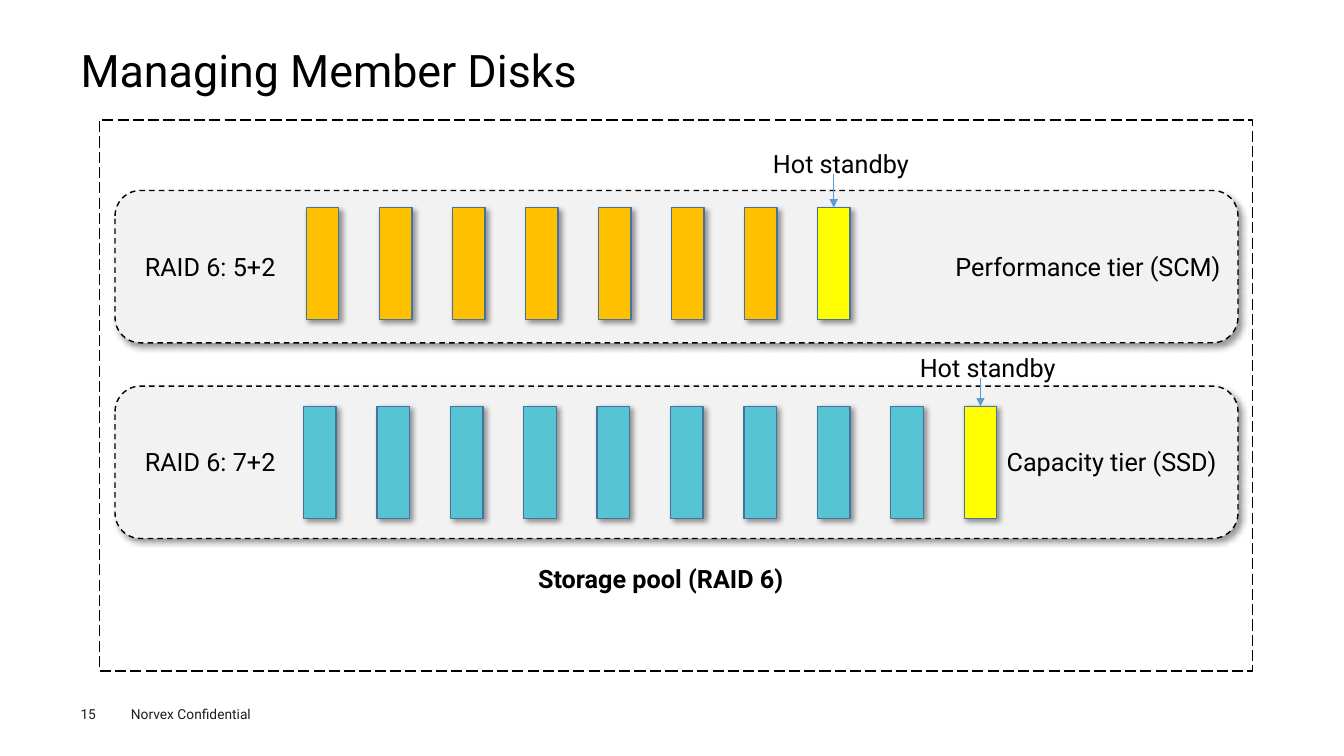
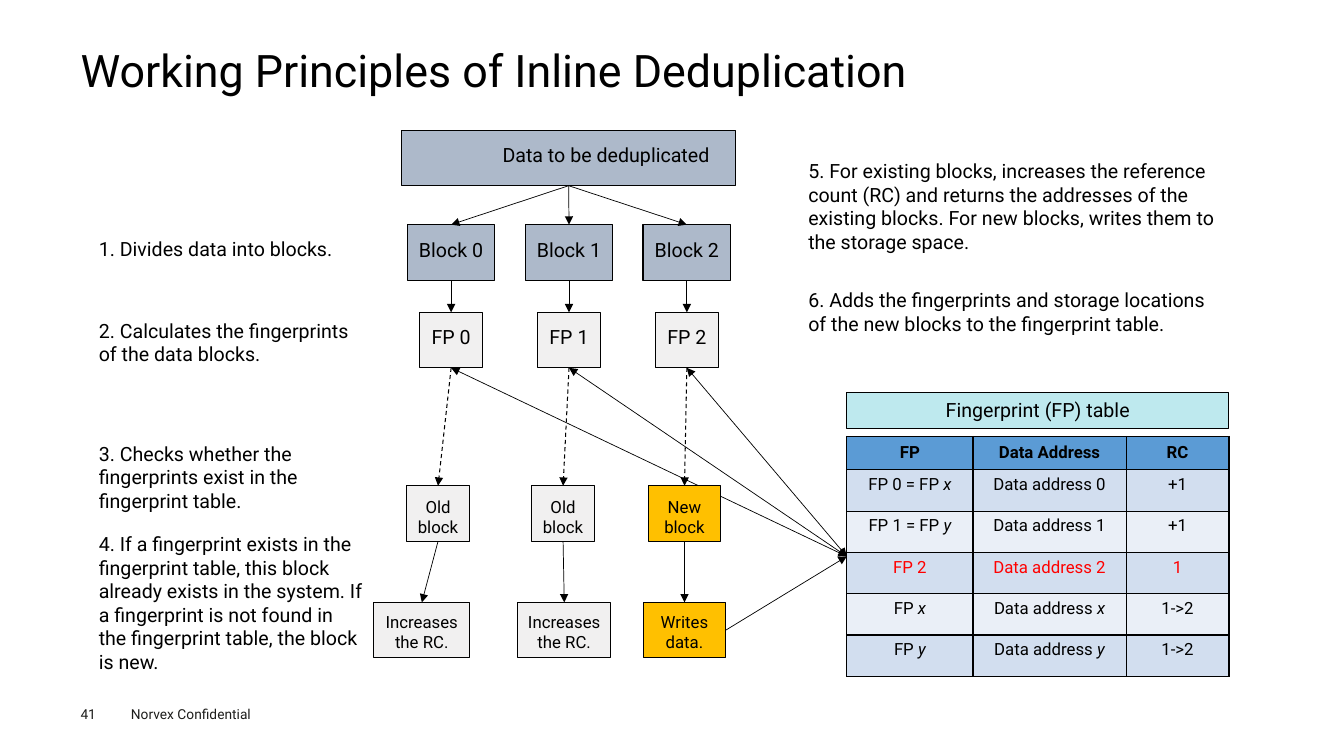
import pptx
import pptx.dml.color
import pptx.enum.dml
import pptx.enum.shapes
import pptx.enum.text
import pptx.oxml
import pptx.oxml.ns
import pptx.util
from lxml import etree

Cm, Pt = pptx.util.Cm, pptx.util.Pt
Dash = pptx.enum.dml.MSO_LINE
Align = pptx.enum.text.PP_ALIGN
Anchor = pptx.enum.text.MSO_ANCHOR
Preset = pptx.enum.shapes.MSO_SHAPE
Link = pptx.enum.shapes.MSO_CONNECTOR
TOP, LEFT, BOTTOM, RIGHT = range(4)

FONT = "Roboto"
FOOTER = "Norvex Confidential"
COLORS = {
    "black": "000000", "white": "FFFFFF", "foot": "1D1D1B", "tier": "F2F2F2",
    "amber": "FFC000", "yellow": "FFFF00", "teal": "56C4D2", "edge": "43739E",
    "blue": "5B9BD5", "slate": "ADB9CA", "grey": "F1F0F0", "aqua": "BEE9EE",
    "dark": "D2DEEF", "light": "EAEFF7", "red": "FF0000",
}

TIERS = [
    {"raid": "RAID 6: 5+2", "name": "Performance tier (SCM)", "top": 4.8,
     "disks": 7, "color": "amber", "left": 7.72, "step": 1.84, "row": 5.23,
     "label": 6.22, "name_x": 23.83, "spare": 3.61, "arrow": 4.39},
    {"raid": "RAID 6: 7+2", "name": "Capacity tier (SSD)", "top": 9.73,
     "disks": 9, "color": "teal", "left": 7.65, "step": 1.85, "row": 10.24,
     "label": 11.13, "name_x": 25.12, "spare": 8.76, "arrow": 9.53},
]
NOTES = [
    (2.24, 5.84, 7.19, 0.86, "1. Divides data into blocks."),
    (2.24, 7.9, 7.19, 1.44, "2. Calculates the fingerprints of the data blocks."),
    (2.24, 11, 7.19, 2.06, "3. Checks whether the fingerprints exist in the fingerprint table."),
    (2.24, 13.28, 7.19, 3.84,
     "4. If a fingerprint exists in the fingerprint table, this block already exists "
     "in the system. If a fingerprint is not found in the fingerprint table, the block is new."),
    (20.12, 3.89, 10.85, 2.64,
     "5. For existing blocks, increases the reference count (RC) and returns the addresses "
     "of the existing blocks. For new blocks, writes them to the storage space."),
    (20.12, 7.14, 10.85, 1.44,
     "6. Adds the fingerprints and storage locations of the new blocks to the fingerprint table."),
]
MID = 11.37
STEP = 2.97
FLOWS = [
    {"fate": "Old\nblock", "act": "Increases the RC.", "color": "grey",
     "fate_x": 11.04, "fate_w": 1.6, "act_x": 10.63, "act_w": 2.41},
    {"fate": "Old\nblock", "act": "Increases the RC.", "color": "grey",
     "fate_x": 14.19, "fate_w": 1.6, "act_x": 14.22, "act_w": 2.34},
    {"fate": "New\nblock", "act": "Writes data.", "color": "amber",
     "fate_x": 17.25, "fate_w": 1.83, "act_x": 17.25, "act_w": 2.08},
]
ROWS = [
    ("FP", "Data Address", "RC"),
    ("FP 0 = FP x", "Data address 0", "+1"),
    ("FP 1 = FP y", "Data address 1", "+1"),
    ("FP 2", "Data address 2", "1"),
    ("FP x", "Data address x", "1->2"),
    ("FP y", "Data address y", "1->2"),
]
COLS = (3.18, 3.86, 2.59)
NEW_ROW = 3


def rgb(name):
    return pptx.dml.color.RGBColor.from_string(COLORS[name])


def style(font, size, color="black", bold=False):
    font.name, font.size, font.bold = FONT, Pt(size), bold
    font.color.rgb = rgb(color)


def sub(node, tag, **attrs):
    return etree.SubElement(node, pptx.oxml.ns.qn(tag), attrs)


def write(frame, text, size, color="black", bold=False, align=Align.LEFT):
    frame.word_wrap = True
    frame.text = text
    for para in frame.paragraphs:
        para.alignment = align
        style(para.font, size, color, bold)


def inset(frame, left=0, top=0, right=0, bottom=0):
    frame.margin_left, frame.margin_top = Cm(left), Cm(top)
    frame.margin_right, frame.margin_bottom = Cm(right), Cm(bottom)


def label(slide, x, y, w, h, text, size, color="black", bold=False):
    box = slide.shapes.add_textbox(Cm(x), Cm(y), Cm(w), Cm(h))
    write(box.text_frame, text, size, color, bold)
    return box.text_frame


def block(slide, x, y, w, h, fill, edge="black", width=0.75, dash=None,
          kind=Preset.RECTANGLE, shade=False):
    shape = slide.shapes.add_shape(kind, Cm(x), Cm(y), Cm(w), Cm(h))
    shape.shadow.inherit = False
    shape.fill.solid()
    shape.fill.fore_color.rgb = rgb(fill)
    shape.line.color.rgb = rgb(edge)
    shape.line.width = Pt(width)
    if dash:
        shape.line.dash_style = dash
    if shade:
        effect = shape._element.spPr.find(pptx.oxml.ns.qn("a:effectLst"))
        outer = sub(effect, "a:outerShdw", blurRad=str(Pt(4)), dist=str(Pt(3)),
                    dir="2700000", algn="tl", rotWithShape="0")
        tone = sub(outer, "a:srgbClr", val=COLORS["black"])
        sub(tone, "a:alpha", val="40000")
    return shape


def node(slide, mid, y, w, fill, text, size=14, top=0, bottom=0):
    shape = block(slide, mid - w / 2, y, w, 1.4, fill)
    frame = shape.text_frame
    write(frame, text, size, align=Align.CENTER)
    inset(frame, 0.1, top, 0.1, bottom)
    frame.vertical_anchor = Anchor.MIDDLE
    return shape


def arrow(slide, start, end, color="black", width=0.5, dash=None, both=False):
    line = slide.shapes.add_connector(Link.STRAIGHT, 0, 0, 0, 0)
    if hasattr(start[0], "shape_id"):
        line.begin_connect(*start)
    else:
        line.begin_x, line.begin_y = start
    line.end_connect(*end)
    line.line.color.rgb = rgb(color)
    line.line.width = Pt(width)
    if dash:
        line.line.dash_style = dash
    ends = ("a:headEnd", "a:tailEnd") if both else ("a:tailEnd",)
    for tag in ends:
        sub(line.line._get_or_add_ln(), tag, type="triangle")
    sub(line._element.spPr, "a:effectLst")


def page(deck, title, number):
    slide = deck.slides.add_slide(deck.slide_layouts[6])
    head = label(slide, 2.03, 1.24, 29.79, 1.37, title, 32)
    inset(head)
    head.paragraphs[0].line_spacing = 0.9
    label(slide, 3.05, 17.65, 4.06, 0.69, FOOTER, 9.8, "foot")
    inset(label(slide, 2.03, 17.78, 1.4, 0.41, number, 9.8, "foot"))
    return slide


def disks(deck):
    slide = page(deck, "Managing Member Disks", "15")
    block(slide, 2.51, 3.02, 29.06, 13.89, "white", width=1, dash=Dash.LONG_DASH)
    for tier in TIERS:
        block(slide, 2.9, tier["top"], 28.3, 3.84, "tier", width=1, dash=Dash.DASH,
              kind=Preset.ROUNDED_RECTANGLE, shade=True)
        fills = [tier["color"]] * tier["disks"] + ["yellow"]
        for i, fill in enumerate(fills):
            x = tier["left"] + i * tier["step"]
            spare = block(slide, x, tier["row"], 0.82, 2.82, fill, "edge", 1, shade=True)
        mid = x + 0.41
        label(slide, 3.4, tier["label"], 5.08, 1.02, tier["raid"], 18)
        label(slide, tier["name_x"], tier["label"], 7.47, 1.02, tier["name"], 18)
        label(slide, mid - 1.78, tier["spare"], 5.18, 1.02, "Hot standby", 18)
        arrow(slide, (Cm(mid), Cm(tier["arrow"])), (spare, TOP), "blue")
    label(slide, 13.31, 14.07, 8.03, 1.02, "Storage pool (RAID 6)", 18, bold=True)


def fill_cell(cell, text, row):
    props = cell._tc.get_or_add_tcPr()
    for side in "LRTB":
        edge = sub(props, "a:ln" + side, w=str(Pt(1)))
        sub(sub(edge, "a:solidFill"), "a:srgbClr", val=COLORS["black"])
    cell.fill.solid()
    cell.fill.fore_color.rgb = rgb("blue" if row == 0 else "dark" if row % 2 else "light")
    cell.vertical_anchor = Anchor.TOP if row else Anchor.MIDDLE
    para = cell.text_frame.paragraphs[0]
    para.alignment = Align.CENTER
    style(para.font, 12, "red" if row == NEW_ROW else "black", row == 0)
    stem = text.rstrip("xy")
    para.add_run().text = stem
    if stem != text:
        var = para.add_run()
        var.text = text[len(stem):]
        var.font.italic = True


def prints(slide):
    head = block(slide, 21.34, 9.88, sum(COLS), 0.91, "aqua")
    write(head.text_frame, "Fingerprint (FP) table", 14, align=Align.CENTER)
    head.text_frame.vertical_anchor = Anchor.MIDDLE
    frame = slide.shapes.add_table(len(ROWS), len(COLS), Cm(21.34), Cm(11),
                                   Cm(sum(COLS)), Cm(6.04))
    table = frame.table
    table.first_row = table.horz_banding = False
    for col, width in zip(table.columns, COLS):
        col.width = Cm(width)
    for r, texts in enumerate(ROWS):
        table.rows[r].height = Cm(1.04 if r else 0.84)
        for c, text in enumerate(texts):
            fill_cell(table.cell(r, c), text, r)
    return frame


def dedup(deck):
    slide = page(deck, "Working Principles of Inline Deduplication", "41")
    for note in NOTES:
        label(slide, *note, 14)
    data = node(slide, 14.33, 3.28, 8.41, "slate", "Data to be deduplicated", bottom=0.15)
    data.text_frame.margin_left = Cm(2.54)
    data.text_frame.paragraphs[0].alignment = Align.LEFT
    table = prints(slide)
    for i, flow in enumerate(FLOWS):
        mid = MID + i * STEP
        part = node(slide, mid, 5.66, 2.21, "slate", f"Block {i}", bottom=0.15)
        mark = node(slide, mid, 7.87, 1.6, "grey", f"FP {i}", bottom=0.15)
        fate = node(slide, flow["fate_x"], 12.24, flow["fate_w"], flow["color"],
                    flow["fate"], 12, top=0.15)
        act = node(slide, flow["act_x"], 15.18, flow["act_w"], flow["color"],
                   flow["act"], 12, top=0.1)
        for above, below in ((data, part), (part, mark), (fate, act)):
            arrow(slide, (above, BOTTOM), (below, TOP))
        arrow(slide, (mark, BOTTOM), (fate, TOP), width=0.75, dash=Dash.DASH)
        arrow(slide, (mark, BOTTOM), (table, LEFT), both=True)
    arrow(slide, (act, RIGHT), (table, LEFT))


def main():
    deck = pptx.Presentation()
    deck.slide_width, deck.slide_height = Cm(33.87), Cm(19.05)
    disks(deck)
    dedup(deck)
    deck.save("out.pptx")


if __name__ == "__main__":
    main()
